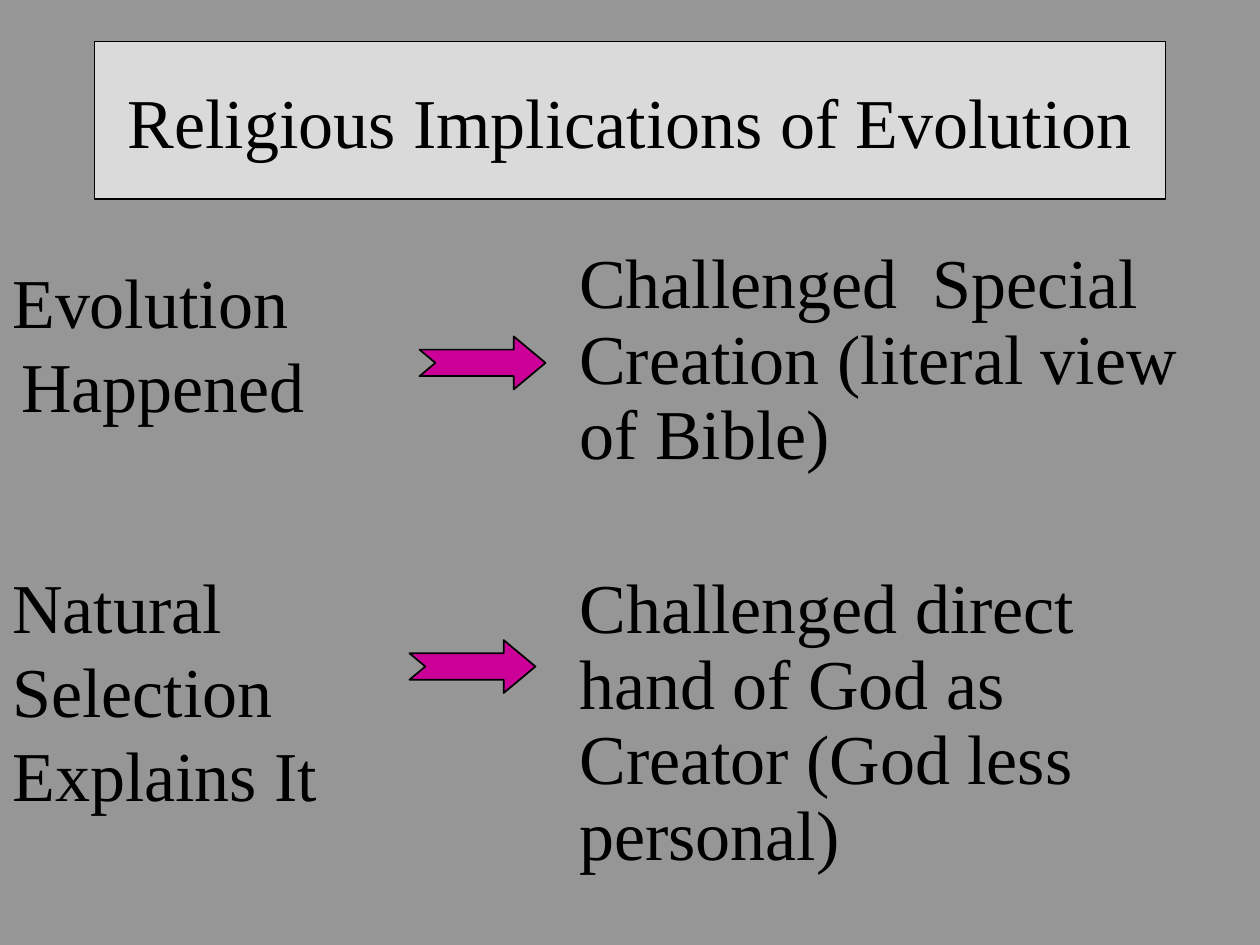
from pptx import Presentation, util as u
from pptx.dml.color import RGBColor
from pptx.enum import shapes, text

# Content
TITLE = "Religious Implications of Evolution"
COLORS = {"page": "969696", "panel": "DADADA", "arrow": "CC0099", "ink": "000000"}
FONT, SIZE = "Times New Roman", 40

# Boxes are left, top, width, height in inches
TITLE_BOX = (0.75, 0.33, 8.5, 1.25)
ROWS = [
    {"cause": "Evolution Happened", "cause_box": (0, 2, 3.17, 1.83), "hanging": 0.07,
     "effect": "Challenged  Special Creation (literal view of Bible)",
     "effect_box": (4.5, 1.92, 5.5, 2.5), "arrow_box": (3.33, 2.67, 1, 0.42)},
    {"cause": "Natural Selection Explains It", "cause_box": (0, 4.42, 3.45, 2.33), "hanging": 0,
     "effect": "Challenged direct hand of God as Creator (God less personal)",
     "effect_box": (4.5, 4.5, 5.25, 2.42), "arrow_box": (3.25, 5.08, 1, 0.42)},
]


def color(name):
    return RGBColor.from_string(COLORS[name])


def inches(bounds):
    return [u.Inches(value) for value in bounds]


def write(box, words):
    frame = box.text_frame
    frame.word_wrap = True
    para = frame.paragraphs[0]
    span = para.add_run()
    span.text = words
    span.font.name, span.font.size = FONT, u.Pt(SIZE)
    span.font.color.rgb = color("ink")
    return para


def add_outlined(parent, kind, bounds, fill):
    shape = parent.add_shape(kind, *inches(bounds))
    shape.shadow.inherit = False
    shape.fill.solid()
    shape.fill.fore_color.rgb = color(fill)
    shape.line.color.rgb = color("ink")
    shape.line.width = u.Pt(1)
    return shape


def add_statement(parent, bounds, words):
    para = write(parent.add_textbox(*inches(bounds)), words)
    para.alignment = text.PP_ALIGN.LEFT
    para.space_before = u.Pt(SIZE * 0.2)
    return para


deck = Presentation()
deck.slide_width, deck.slide_height = inches((10, 7.5))
page = deck.slides.add_slide(deck.slide_layouts[6])
page.background.fill.solid()
page.background.fill.fore_color.rgb = color("page")

# Title panel
panel = add_outlined(page.shapes, shapes.MSO_SHAPE.RECTANGLE, TITLE_BOX, "panel")
panel.text_frame.vertical_anchor = text.MSO_ANCHOR.MIDDLE
write(panel, TITLE).alignment = text.PP_ALIGN.CENTER

# Causes on the left
for row in ROWS:
    para = add_statement(page.shapes, row["cause_box"], row["cause"])
    if row["hanging"]:
        indent = u.Inches(row["hanging"])
        props = para._p.get_or_add_pPr()
        props.set("marL", str(indent))
        props.set("indent", str(-indent))

# Effects on the right, each grouped with its arrow
for row in ROWS:
    group = page.shapes.add_group_shape()
    para = add_statement(group.shapes, row["effect_box"], row["effect"])
    para.line_spacing = 0.9
    arrow = add_outlined(group.shapes, shapes.MSO_SHAPE.NOTCHED_RIGHT_ARROW,
                         row["arrow_box"], "arrow")
    arrow.adjustments[0], arrow.adjustments[1] = 0.5, 0.6

deck.save("out.pptx")
